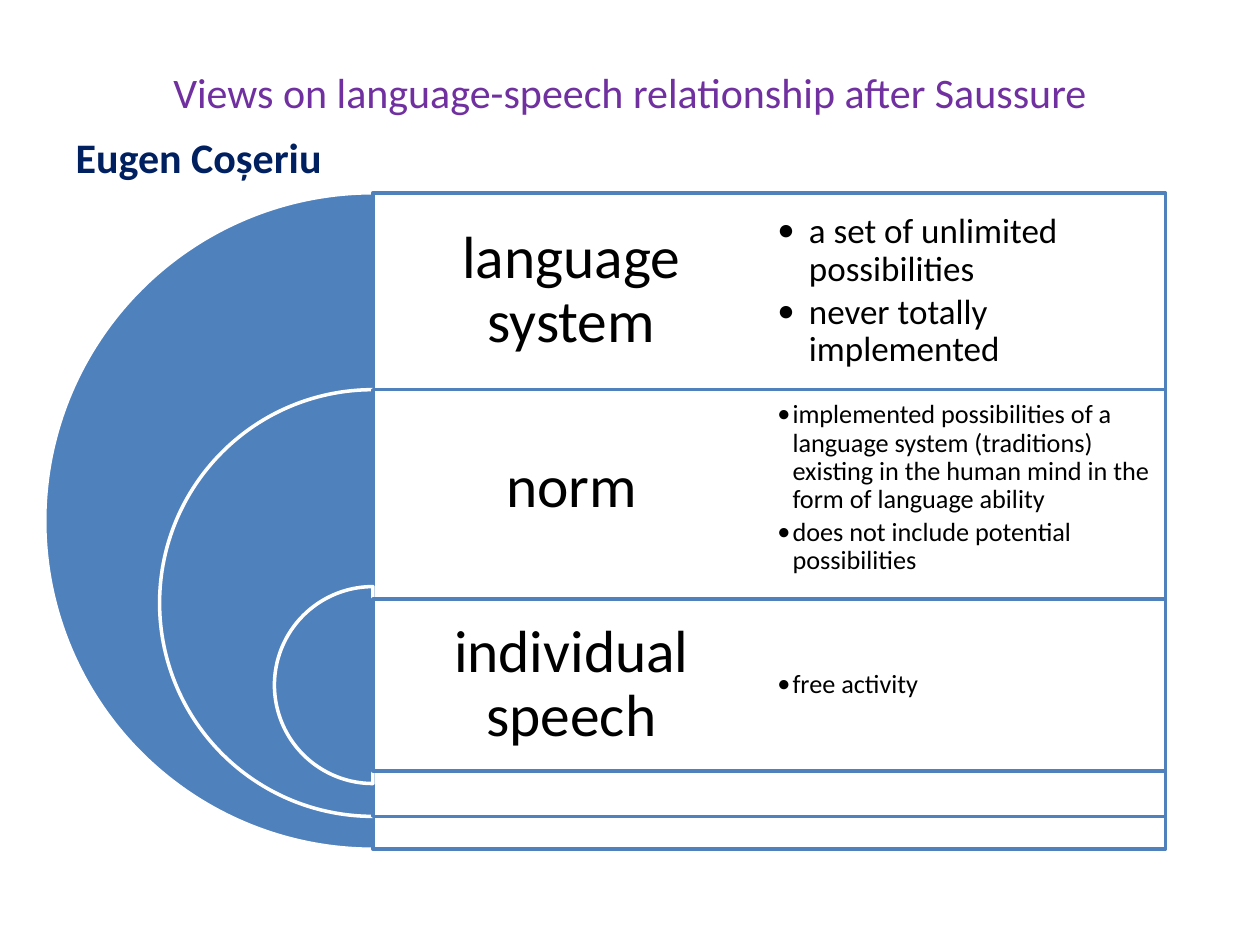
from typing import NamedTuple

from lxml.etree import SubElement
from pptx import Presentation
from pptx.dml.color import RGBColor
from pptx.enum.shapes import MSO_SHAPE as Shape
from pptx.enum.text import MSO_ANCHOR as Anchor, PP_ALIGN as Align
from pptx.oxml.ns import qn
from pptx.util import Inches, Pt

FONT = "Calibri"
BLUE, WHITE, BLACK, PURPLE, NAVY = "4F81BD", "FFFFFF", "000000", "7030A0", "002060"

DIAMETER = 5.21            # outermost half disc
TOP = 1.53
AXIS = 2.96                # flat side of the half discs, left edge of the rows
ROW = 0.3 * DIAMETER       # row pitch
SHRINK = 0.35              # share of the diameter lost with each level
COLUMN = 3.15              # label column and detail column
PANEL_WIDTH = 6.29
LABEL_SIZE = 34


class Level(NamedTuple):
    label: str
    details: list[str]
    detail_size: int
    hanging: float
    panel_inset: float = 0  # how far the panel lies inside its disc, top and bottom


LEVELS = [
    Level("language system",
          ["a set of unlimited possibilities", "never totally implemented"], 20, 0.25),
    Level("norm",
          ["implemented possibilities of a language system (traditions) existing "
           "in the human mind in the form of language ability",
           "does not include potential possibilities"], 15, 0.12),
    Level("individual speech", ["free activity"], 15, 0.12, 0.1),
]


def color(value: str) -> RGBColor:
    return RGBColor.from_string(value)


def inches(*lengths: float) -> list[int]:
    return [Inches(length) for length in lengths]


def place(item, *box: float) -> None:
    for side, length in zip(("left", "top", "width", "height"), inches(*box)):
        setattr(item, side, length)


def write(paragraph, text: str, size: float, ink: str, bold: bool = False) -> None:
    run = paragraph.add_run()
    run.text = text
    for key, value in {"name": FONT, "size": Pt(size), "bold": bold}.items():
        setattr(run.font, key, value)
    run.font.color.rgb = color(ink)


def hang(paragraph, indent: float, bullet: str = "") -> None:
    """Set a hanging indent, with a bullet or none."""
    props = paragraph._p.get_or_add_pPr()
    props.set("marL", str(Inches(indent)))
    props.set("indent", str(-Inches(indent)))
    if bullet:
        SubElement(props, qn("a:buFont")).set("typeface", FONT)
        SubElement(props, qn("a:buChar")).set("char", bullet)
    else:
        SubElement(props, qn("a:buNone"))


def add_block(slide, kind: Shape, box: tuple, fill: str, line: str):
    block = slide.shapes.add_shape(kind, *inches(*box))
    block.shadow.inherit = False
    block.fill.solid()
    block.fill.fore_color.rgb = color(fill)
    block.line.color.rgb = color(line)
    block.line.width = Pt(2)
    return block


def add_text(slide, box: tuple, lines: list[str], size: int, inset: float,
             after: float, align: Align, hanging: float = 0) -> None:
    frame = slide.shapes.add_textbox(*inches(*box)).text_frame
    margins = {f"margin_{side}": Inches(inset) for side in ("left", "top", "right", "bottom")}
    for key, value in {"word_wrap": True, "vertical_anchor": Anchor.MIDDLE, **margins}.items():
        setattr(frame, key, value)
    for index, text in enumerate(lines):
        paragraph = frame.add_paragraph() if index else frame.paragraphs[0]
        spacing = {"alignment": align, "line_spacing": 0.9, "space_after": Pt(size * after)}
        for key, value in spacing.items():
            setattr(paragraph, key, value)
        if hanging:
            hang(paragraph, hanging, "•")
        write(paragraph, text, size, BLACK)


def add_level(slide, index: int, level: Level) -> None:
    diameter = DIAMETER * (1 - SHRINK * index)
    row_top = TOP + ROW * index
    disc = add_block(slide, Shape.PIE, (AXIS - diameter / 2, row_top, diameter, diameter),
                     BLUE, WHITE)
    disc.adjustments[0], disc.adjustments[1] = 54, 162  # 90 to 270 degrees

    inset = level.panel_inset
    panel_top = row_top + inset
    panel = add_block(slide, Shape.RECTANGLE,
                      (AXIS, panel_top, PANEL_WIDTH, diameter - 2 * inset), WHITE, BLUE)
    solid = panel.fill._xPr.find(qn("a:solidFill"))
    SubElement(solid[0], qn("a:alpha")).set("val", "90000")

    add_text(slide, (AXIS, panel_top, COLUMN, ROW - 2 * inset), [level.label],
             LABEL_SIZE, 0.14, 0.35, Align.CENTER)
    add_text(slide, (AXIS + COLUMN, row_top, COLUMN, ROW), level.details,
             level.detail_size, 0.06, 0.15, Align.LEFT, level.hanging)


def main() -> None:
    deck = Presentation()
    deck.slide_width, deck.slide_height = inches(10, 7.5)
    slide = deck.slides.add_slide(deck.slide_layouts[1])
    title, author = slide.placeholders

    place(title, 0.5, 0.3, 9, 0.85)
    title.text_frame.vertical_anchor = Anchor.MIDDLE
    heading = title.text_frame.paragraphs[0]
    heading.alignment = Align.CENTER
    write(heading, "Views on language-speech relationship after Saussure", 24, PURPLE)

    place(author, 0.5, 0.99, 9.15, 6.06)
    name = author.text_frame.paragraphs[0]
    hang(name, 0.38)
    write(name, "Eugen Coșeriu", 24, NAVY, bold=True)

    for index, level in enumerate(LEVELS):
        add_level(slide, index, level)
    deck.save("out.pptx")


if __name__ == "__main__":
    main()
